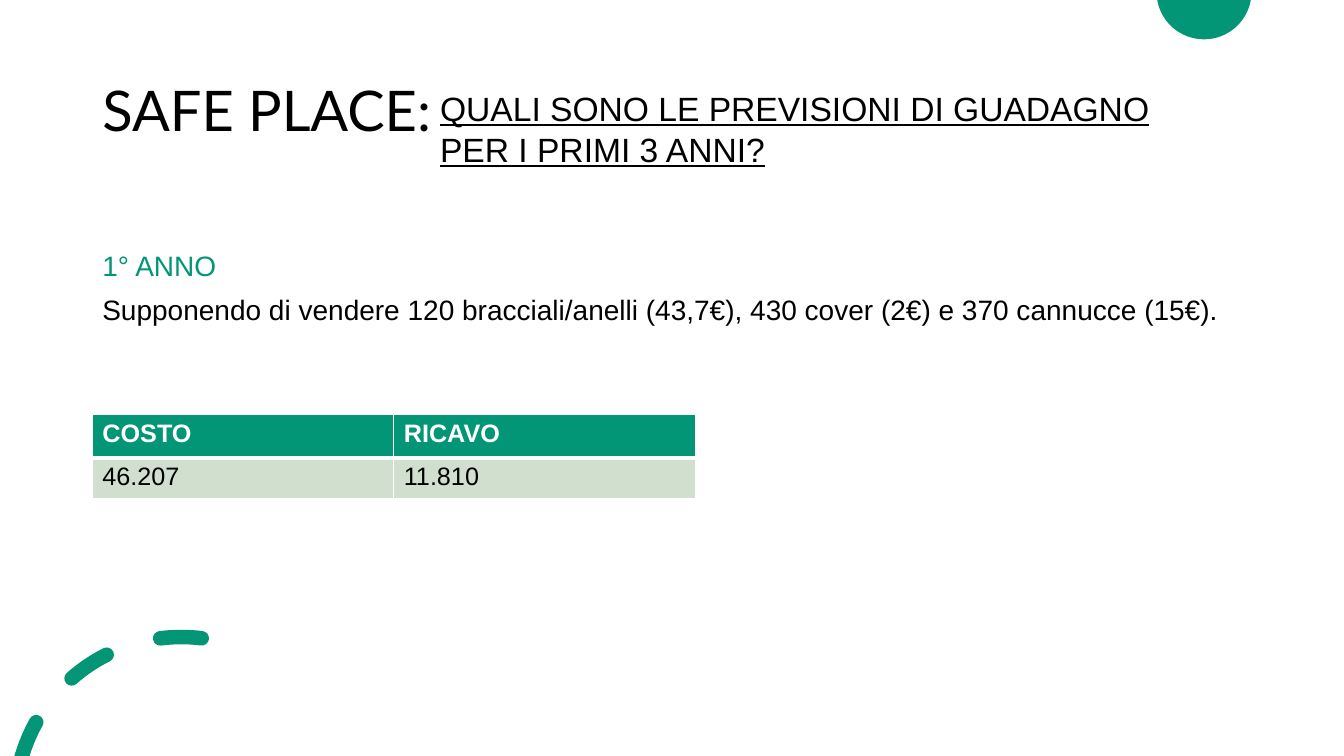
from math import cos, radians, sin, tan

from lxml.etree import SubElement
from pptx import Presentation
from pptx.dml.color import RGBColor
from pptx.enum.text import MSO_ANCHOR, PP_ALIGN
from pptx.oxml.ns import qn
from pptx.util import Pt

GREEN = RGBColor(0x02, 0x96, 0x76)
SAGE = RGBColor(0xD1, 0xDF, 0xCE)
BLACK = RGBColor(0, 0, 0)
WHITE = RGBColor(0xFF, 0xFF, 0xFF)


def write(para, text, size=20, font="Arial", color=BLACK, bold=False, underline=None, spacing=None, before=None):
    para.alignment = PP_ALIGN.LEFT
    para.line_spacing = spacing
    para.space_before = before
    span = para.add_run()
    span.text = text
    span.font.size = Pt(size)
    span.font.name = font
    span.font.color.rgb = color
    span.font.bold = bold
    span.font.underline = underline


def arc(center_x, center_y, radius, start, end, pieces=1):
    step = radians(end - start) / pieces
    pull = 4 / 3 * tan(step / 4)
    points = [(center_x + radius * cos(radians(start)), center_y - radius * sin(radians(start)))]
    for piece in range(pieces):
        first = radians(start) + piece * step
        last = first + step
        for x, y in [
            (cos(first) - pull * sin(first), sin(first) + pull * cos(first)),
            (cos(last) + pull * sin(last), sin(last) - pull * cos(last)),
            (cos(last), sin(last)),
        ]:
            points.append((center_x + radius * x, center_y - radius * y))
    return points


deck = Presentation()
deck.slide_width, deck.slide_height = Pt(960), Pt(540)
page = deck.slides.add_slide(deck.slide_layouts[5])

ring_x, ring_y, ring_radius, half_width = 129.6, 573.84, 118.8, 5.2
outer, inner = ring_radius + half_width, ring_radius - half_width
dashes = []
for start, end, inner_start in [(164.2, 150.8, 162.7), (131.3, 116.7, 131.3), (97.3, 83, 97.3)]:
    start_cap = arc(ring_x, ring_y, ring_radius, start, end)[0]
    end_cap = arc(ring_x, ring_y, ring_radius, end, start)[0]
    dash = arc(ring_x, ring_y, outer, start, end)
    dash += arc(*end_cap, half_width, end, end - 180, 2)[1:]
    dash += arc(ring_x, ring_y, inner, end, inner_start)[1:]
    if inner_start == start:
        dash += arc(*start_cap, half_width, start + 180, start, 2)[1:]
    dashes.append(dash)

disc = arc(860, -5.8, 33.9, 189.85, 350.15, 2)
for left, top, width, height, contours in [
    (826.6, 0, 66.8, 28.1, [disc]),
    (10.2, 449.8, 139.4, 90.2, dashes),
]:
    builder = page.shapes.build_freeform(Pt(left), Pt(top))
    builder.add_line_segments([(Pt(left + width), Pt(top)), (Pt(left + width), Pt(top + height))])
    shape = builder.convert_to_shape()
    shape.shadow.inherit = False
    shape.fill.solid()
    shape.fill.fore_color.rgb = GREEN
    shape.line.fill.background()
    outline = next(shape.element.iter(qn("a:path")))
    for segment in list(outline):
        outline.remove(segment)
    for contour in contours:
        groups = [("a:moveTo", contour[:1])]
        groups += [("a:cubicBezTo", contour[index:index + 3]) for index in range(1, len(contour), 3)]
        for tag, points in groups:
            segment = SubElement(outline, qn(tag))
            for x, y in points:
                SubElement(segment, qn("a:pt"), x=str(Pt(x - left)), y=str(Pt(y - top)))
        SubElement(outline, qn("a:close"))

title = page.shapes.title
title.left, title.top, title.width, title.height = Pt(66), Pt(28.75), Pt(271), Pt(104.4)
title.text_frame.vertical_anchor = MSO_ANCHOR.MIDDLE
write(title.text_frame.paragraphs[0], "SAFE PLACE:", size=40, font="Lato", spacing=0.9)

body = page.shapes.add_textbox(Pt(66), Pt(176.4), Pt(828), Pt(303.8)).text_frame
body.word_wrap = True
write(body.paragraphs[0], "1° ANNO", color=GREEN, spacing=0.9, before=Pt(10))
write(
    body.add_paragraph(),
    "Supponendo di vendere 120 bracciali/anelli (43,7€), 430 cover (2€) e 370 cannucce (15€).",
    spacing=0.9,
    before=Pt(10),
)

question = page.shapes.add_textbox(Pt(307.3), Pt(59.4), Pt(573), Pt(65.5)).text_frame
question.word_wrap = True
write(
    question.paragraphs[0],
    "QUALI SONO LE PREVISIONI DI GUADAGNO PER I PRIMI 3 ANNI?",
    size=24,
    underline=True,
)

forecast = [("COSTO", "RICAVO"), ("46.207", "11.810")]
table = page.shapes.add_table(2, 2, Pt(66), Pt(295.8), Pt(430.6), Pt(60.5)).table
table.rows[0].height, table.rows[1].height = Pt(31.3), Pt(29.2)
for row, values in enumerate(forecast):
    header = row == 0
    thick_side = "a:lnB" if header else "a:lnT"
    for column, value in enumerate(values):
        cell = table.cell(row, column)
        properties = cell._tc.get_or_add_tcPr()
        for side in ("a:lnL", "a:lnR", "a:lnT", "a:lnB"):
            border = SubElement(properties, qn(side), w=str(Pt(3 if side == thick_side else 1)))
            SubElement(SubElement(border, qn("a:solidFill")), qn("a:srgbClr"), val=str(WHITE))
        cell.fill.solid()
        cell.fill.fore_color.rgb = GREEN if header else SAGE
        write(cell.text_frame.paragraphs[0], value, size=18, color=WHITE if header else BLACK, bold=header)

deck.save("out.pptx")
